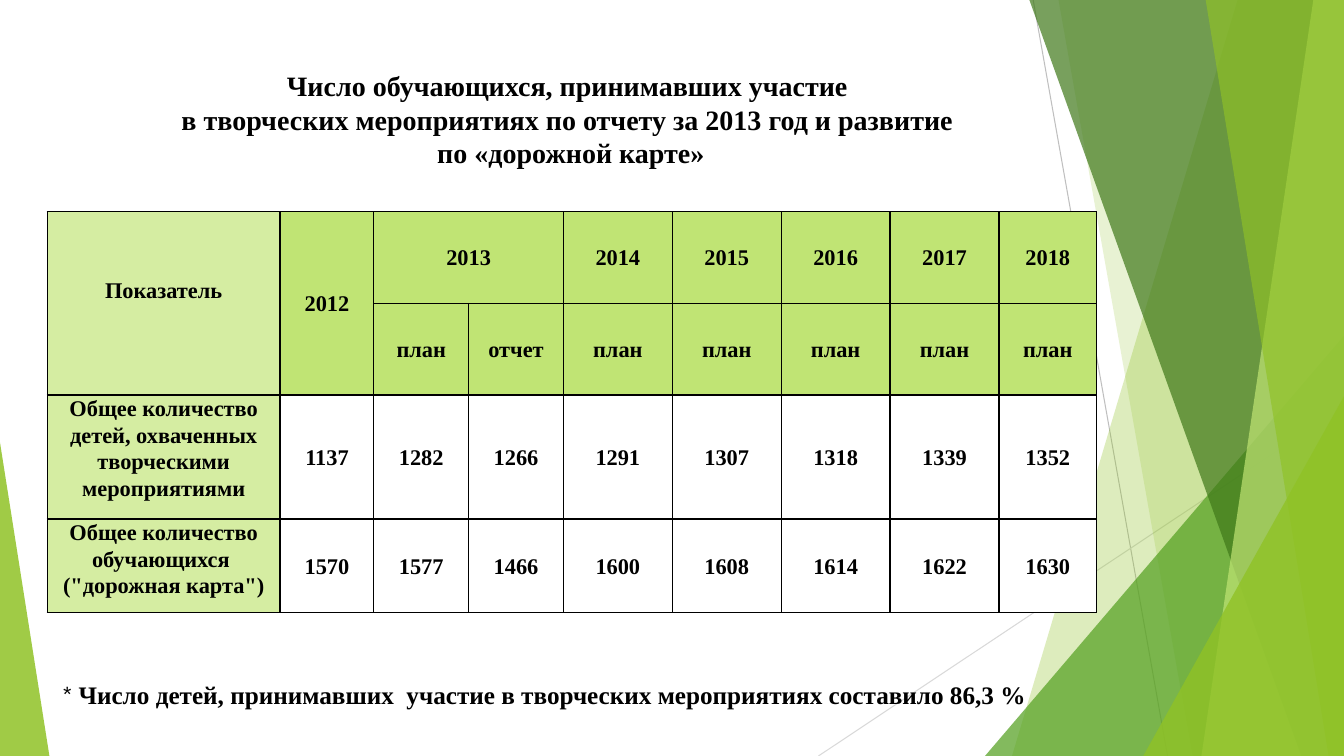
from dataclasses import dataclass
from typing import Any, Union

from lxml import etree
from pptx import Presentation
from pptx.dml.color import RGBColor
from pptx.enum.shapes import MSO_CONNECTOR, MSO_SHAPE
from pptx.enum.text import MSO_ANCHOR, MSO_AUTO_SIZE, PP_ALIGN
from pptx.oxml.ns import qn
from pptx.util import Pt

LINE = MSO_CONNECTOR.STRAIGHT
WEDGE = MSO_SHAPE.ISOSCELES_TRIANGLE
TOP, MIDDLE = MSO_ANCHOR.TOP, MSO_ANCHOR.MIDDLE
CENTER, LEFT = PP_ALIGN.CENTER, PP_ALIGN.LEFT
FIT_NONE = MSO_AUTO_SIZE.NONE

WIDE, HIGH = 960, 540
COLORS = {
    "black": "000000", "white": "FFFFFF", "gray": "BFBFBF", "mist": "D9D9D9",
    "green": "90C226", "leaf": "54A021", "moss": "3F7819",
    "lime": "C0E474", "pale": "D5EDA2",
}
SERIF = "Times New Roman"
HEAD = {"name": SERIF, "size": Pt(20), "bold": True}
CELL = {"name": SERIF, "size": Pt(16), "bold": True}
STAR = {"name": "Karla", "size": Pt(18), "bold": False}
NOTE = {"name": SERIF, "size": Pt(18), "bold": True}


@dataclass
class Ray:
    start: tuple[float, float]
    end: tuple[float, float]
    color: str


@dataclass
class Band:
    top: float
    base: float
    color: str
    alpha: int


@dataclass
class Wedge:
    box: tuple[float, float, float, float]
    peak: int
    color: str
    alpha: int


RAYS = [
    Ray((738, 0), (834, HIGH), "gray"),
    Ray((WIDE, 290.2), (584.6, HIGH), "mist"),
]
FACETS: list[Union[Band, Wedge]] = [
    Band(884.2, 722.9, "green", 30),
    Band(756, 851.8, "green", 20),
    Wedge((703.6, 239.8, 256.4, 300.2), 1, "leaf", 72),
    Band(735.1, 929.5, "moss", 70),
    Band(938.2, 858.2, "lime", 70),
    Band(861.1, 949, "green", 65),
    Wedge((816.6, 283, 143.4, 257), 1, "green", 80),
    Wedge((0, 316.1, 35.3, 223.9), 0, "green", 85),
]
TITLE = (
    "Число обучающихся, принимавших участие \n"
    "в творческих мероприятиях по отчету за 2013 год и развитие \n"
    "по «дорожной карте»"
)
REMARK = "Число детей, принимавших  участие в творческих мероприятиях составило 86,3 %"
COLS = [166.3, 67, 67.7, 67.7] + [77.8] * 4 + [69.8]
ROWS = [65.5, 65.5, 88.6, 67]
CELLS = [
    ["Показатель", "2012", "2013", "", "2014", "2015", "2016", "2017", "2018"],
    ["", "", "план", "отчет"] + ["план"] * 5,
    ["Общее количество детей, охваченных творческими мероприятиями",
     "1137", "1282", "1266", "1291", "1307", "1318", "1339", "1352"],
    ["Общее количество обучающихся \n(\"дорожная карта\")",
     "1570", "1577", "1466", "1600", "1608", "1614", "1622", "1630"],
]
SPANS = [((0, 0), (1, 0)), ((0, 1), (1, 1)), ((0, 2), (0, 3))]


def tint(name: str) -> RGBColor:
    return RGBColor.from_string(COLORS[name])


def apply(item: Any, form: dict[str, Any]) -> None:
    for key, value in form.items():
        setattr(item, key, value)


def style(run: Any, form: dict[str, Any]) -> None:
    apply(run.font, form)
    run.font.color.rgb = tint("black")


def draw_ray(shapes: Any, ray: Ray) -> None:
    line = shapes.add_connector(LINE, *map(Pt, ray.start + ray.end))
    line.line.color.rgb = tint(ray.color)
    line.line.width = Pt(0.75)
    etree.SubElement(line._element.spPr, qn("a:effectLst"))


def draw_facet(shapes: Any, facet: Union[Band, Wedge]) -> None:
    if isinstance(facet, Band):
        path = shapes.build_freeform(Pt(facet.top), Pt(-0.6))
        ends = [(WIDE, -0.6), (WIDE, HIGH), (facet.base, HIGH)]
        path.add_line_segments([(Pt(x), Pt(y)) for x, y in ends], close=True)
        shape = path.convert_to_shape()
    else:
        shape = shapes.add_shape(WEDGE, *map(Pt, facet.box))
        shape.adjustments[0] = facet.peak
    shape.shadow.inherit = False
    shape.fill.solid()
    shape.fill.fore_color.rgb = tint(facet.color)
    shape.line.fill.background()
    color = shape._element.spPr.find(".//" + qn("a:srgbClr"))
    etree.SubElement(color, qn("a:alpha"), val=str(facet.alpha * 1000))


def frame(cell: Any) -> None:
    props = cell._tc.get_or_add_tcPr()
    for spot, side in enumerate("LRTB"):
        edge = etree.Element(qn(f"a:ln{side}"), w=str(Pt(1)))
        fill = etree.SubElement(edge, qn("a:solidFill"))
        etree.SubElement(fill, qn("a:srgbClr"), val=COLORS["black"])
        props.insert(spot, edge)


def shade(row: int, col: int) -> str:
    if col == 0:
        return "pale"
    return "lime" if row < 2 else "white"


def draw_table(shapes: Any) -> None:
    box = map(Pt, (33.8, 151.2, sum(COLS), sum(ROWS)))
    table = shapes.add_table(len(ROWS), len(COLS), *box).table
    apply(table, {"first_row": False, "horz_banding": False})
    for col, width in zip(table.columns, COLS):
        col.width = Pt(width)
    for row, height in zip(table.rows, ROWS):
        row.height = Pt(height)
    for start, end in SPANS:
        table.cell(*start).merge(table.cell(*end))
    for i, texts in enumerate(CELLS):
        for j, text in enumerate(texts):
            cell = table.cell(i, j)
            cell.fill.solid()
            cell.fill.fore_color.rgb = tint(shade(i, j))
            frame(cell)
            apply(cell, {
                "margin_left": Pt(5), "margin_right": Pt(5),
                "margin_top": 0, "margin_bottom": 0,
                "vertical_anchor": TOP if i > 1 and j == 0 else MIDDLE,
            })
            if text:
                cell.text = text
            for par in cell.text_frame.paragraphs:
                apply(par, {"alignment": CENTER, "line_spacing": 1.07})
                for run in par.runs:
                    style(run, CELL)
    table.cell(0, 0).margin_bottom = Pt(19)


def place(shape: Any, box: tuple[float, ...]) -> None:
    apply(shape, dict(zip(("left", "top", "width", "height"), map(Pt, box))))
    apply(shape.text_frame, {
        "word_wrap": True, "auto_size": FIT_NONE, "vertical_anchor": TOP,
    })


def draw_title(shapes: Any) -> None:
    title = shapes.title
    place(title, (72.7, 45.4, 655.2, 79.9))
    title.text_frame.text = TITLE
    for par in title.text_frame.paragraphs:
        par.alignment = CENTER
        for run in par.runs:
            style(run, HEAD)
    first = title.text_frame.paragraphs[0]._p.get_or_add_pPr()
    first.set("marL", str(Pt(15)))
    shapes._spTree.append(title._element)


def draw_note(shapes: Any) -> None:
    note = shapes.add_textbox(0, 0, 0, 0)
    place(note, (37.4, 481.7, 748.8, 51.1))
    par = note.text_frame.paragraphs[0]
    par.alignment = LEFT
    for text, form in (("* ", STAR), (REMARK, NOTE)):
        run = par.add_run()
        run.text = text
        style(run, form)


def main() -> None:
    deck = Presentation()
    apply(deck, {"slide_width": Pt(WIDE), "slide_height": Pt(HIGH)})
    shapes = deck.slides.add_slide(deck.slide_layouts[5]).shapes
    for ray in RAYS:
        draw_ray(shapes, ray)
    for facet in FACETS:
        draw_facet(shapes, facet)
    draw_table(shapes)
    draw_title(shapes)
    draw_note(shapes)
    deck.save("out.pptx")


if __name__ == "__main__":
    main()
